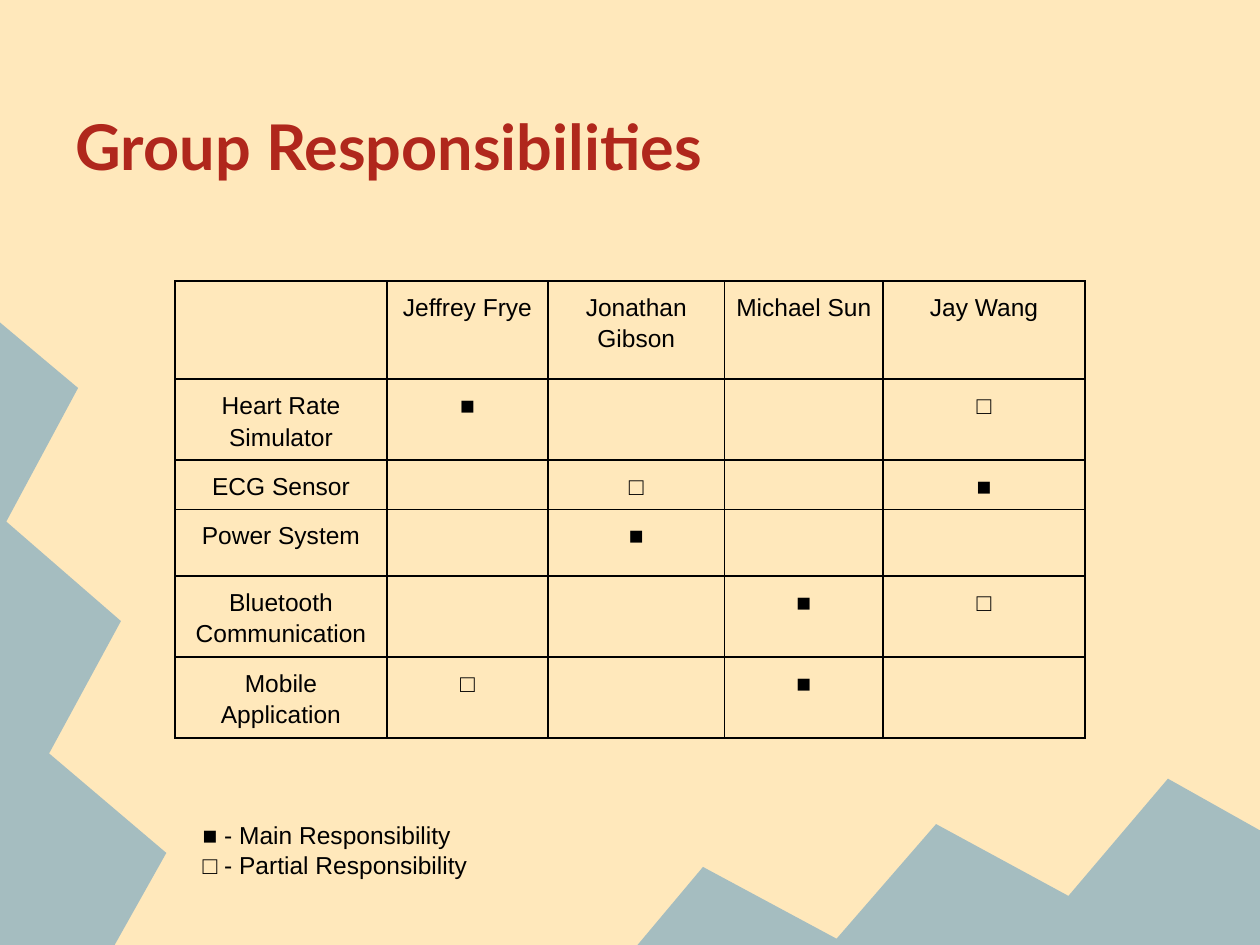
import pptx
import pptx.util
import pptx.dml.color
import pptx.enum.text
import pptx.oxml
import pptx.oxml.ns
from pptx.util import Inches

BACKGROUND, PEAKS, RED, BLACK = "FFE8BB", "A5BDC0", "B0271C", "000000"

PEAK_OUTLINE = [(0, 0), (0, 4.94), (0.91, 4.94), (1.32, 4.21), (0.39, 3.42),
                (0.96, 2.37), (0.05, 1.58), (0.62, 0.52)]

MAIN, PARTIAL = "■", "□"
RESPONSIBILITIES = [
    ["", "Jeffrey Frye", "Jonathan Gibson", "Michael Sun", "Jay Wang"],
    ["Heart Rate Simulator", MAIN, "", "", PARTIAL],
    ["ECG Sensor", "", PARTIAL, "", MAIN],
    ["Power System", "", MAIN, "", ""],
    ["Bluetooth Communication", "", "", MAIN, PARTIAL],
    ["Mobile Application", PARTIAL, "", MAIN, ""],
]
COLUMN_WIDTHS = [1.68, 1.28, 1.4, 1.26, 1.6]
ROW_HEIGHTS = [0.78, 0.53, 0.21, 0.53, 0.58, 0.63]


def color(hex_string):
    return pptx.dml.color.RGBColor.from_string(hex_string)


def add_run(paragraph, text, size, font, hex_string, bold=False):
    run = paragraph.add_run()
    run.text = text
    run.font.size = pptx.util.Pt(size)
    run.font.name = font
    run.font.bold = bold
    run.font.color.rgb = color(hex_string)


def set_margins(target, margin):
    target.margin_left = target.margin_right = Inches(margin)
    target.margin_top = target.margin_bottom = Inches(margin)


def add_peaks(slide, left, top, rotation=0):
    points = [(Inches(x), Inches(y)) for x, y in PEAK_OUTLINE]
    builder = slide.shapes.build_freeform(*points[0])
    builder.add_line_segments(points[1:], close=True)
    shape = builder.convert_to_shape(Inches(left), Inches(top))
    shape.rotation = rotation
    shape.shadow.inherit = False
    shape.fill.solid()
    shape.fill.fore_color.rgb = color(PEAKS)
    shape.line.fill.background()


def add_title(slide, left, top, width, height):
    title = slide.shapes.title
    title.left, title.top = Inches(left), Inches(top)
    title.width, title.height = Inches(width), Inches(height)
    frame = title.text_frame
    set_margins(frame, 0.1)
    frame.word_wrap = True
    frame.auto_size = pptx.enum.text.MSO_AUTO_SIZE.NONE
    frame.vertical_anchor = pptx.enum.text.MSO_ANCHOR.BOTTOM
    paragraph = frame.paragraphs[0]
    paragraph.alignment = pptx.enum.text.PP_ALIGN.LEFT
    add_run(paragraph, "Group Responsibilities", 36, "Lato", RED, bold=True)


def set_borders(cell, hex_string, width):
    properties = cell._tc.get_or_add_tcPr()
    for index, side in enumerate(("lnL", "lnR", "lnT", "lnB")):
        properties.insert(index, pptx.oxml.parse_xml(
            f'<a:{side} {pptx.oxml.ns.nsdecls("a")} w="{pptx.util.Pt(width)}">'
            f'<a:solidFill><a:srgbClr val="{hex_string}"/></a:solidFill></a:{side}>'))


def fill_cell(cell, text):
    cell.fill.background()
    set_borders(cell, BLACK, 1)
    set_margins(cell, 0.07)
    paragraph = cell.text_frame.paragraphs[0]
    paragraph.alignment = pptx.enum.text.PP_ALIGN.CENTER
    paragraph.line_spacing = 1.15
    if text:
        add_run(paragraph, text, 14, "Arial", BLACK)
    else:
        # An empty cell keeps the text size, so that it does not stretch its row
        paragraph._p.append(pptx.oxml.parse_xml(
            f'<a:endParaRPr {pptx.oxml.ns.nsdecls("a")} sz="1400"/>'))


def add_responsibility_table(slide, left, top, width, height):
    table = slide.shapes.add_table(
        len(ROW_HEIGHTS), len(COLUMN_WIDTHS),
        Inches(left), Inches(top), Inches(width), Inches(height)).table
    table.first_row = table.horz_banding = False
    for column, column_width in zip(table.columns, COLUMN_WIDTHS):
        column.width = Inches(column_width)
    for row, row_height, texts in zip(table.rows, ROW_HEIGHTS, RESPONSIBILITIES):
        row.height = Inches(row_height)
        for cell, text in zip(row.cells, texts):
            fill_cell(cell, text)


def add_legend(slide, left, top, width, height):
    frame = slide.shapes.add_textbox(
        Inches(left), Inches(top), Inches(width), Inches(height)).text_frame
    frame.word_wrap = True
    set_margins(frame, 0.1)
    for index, (mark, meaning) in enumerate([(MAIN, "Main"), (PARTIAL, "Partial")]):
        paragraph = frame.add_paragraph() if index else frame.paragraphs[0]
        add_run(paragraph, f"{mark} - {meaning} Responsibility", 14, "Arial", BLACK)


def main():
    presentation = pptx.Presentation()
    presentation.slide_width, presentation.slide_height = Inches(10), Inches(7.5)
    slide = presentation.slides.add_slide(presentation.slide_layouts[5])
    slide.background.fill.solid()
    slide.background.fill.fore_color.rgb = color(BACKGROUND)

    # Peaks along the left and bottom edges
    add_peaks(slide, 0, 2.56)
    add_peaks(slide, 6.87, 4.37, rotation=270)

    # Title, table and legend
    add_title(slide, 0.5, 0.3, 9, 1.25)
    add_responsibility_table(slide, 1.39, 2.23, 7.22, 3.75)
    add_legend(slide, 1.51, 6.41, 7.1, 0.82)
    presentation.save("out.pptx")


if __name__ == "__main__":
    main()
